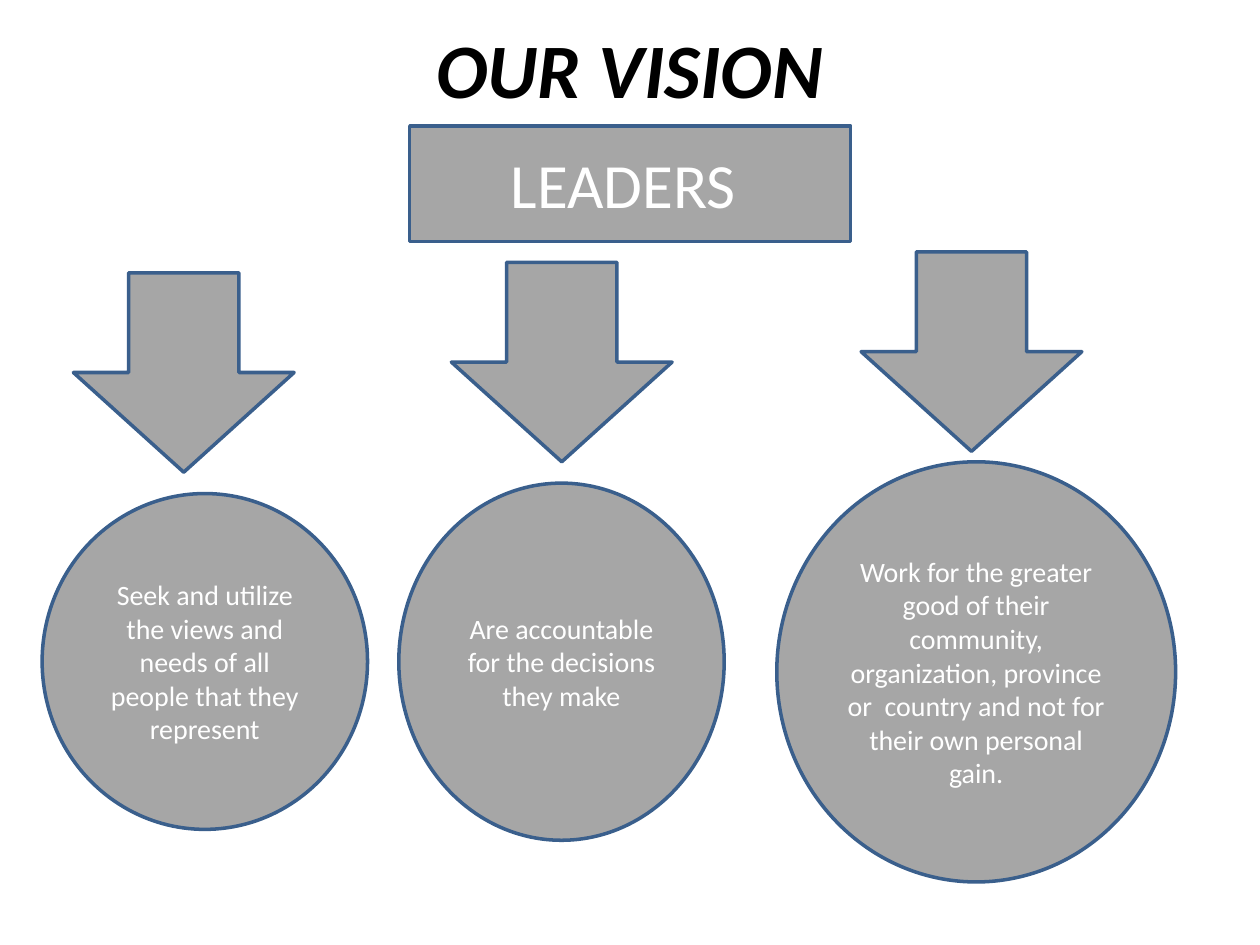
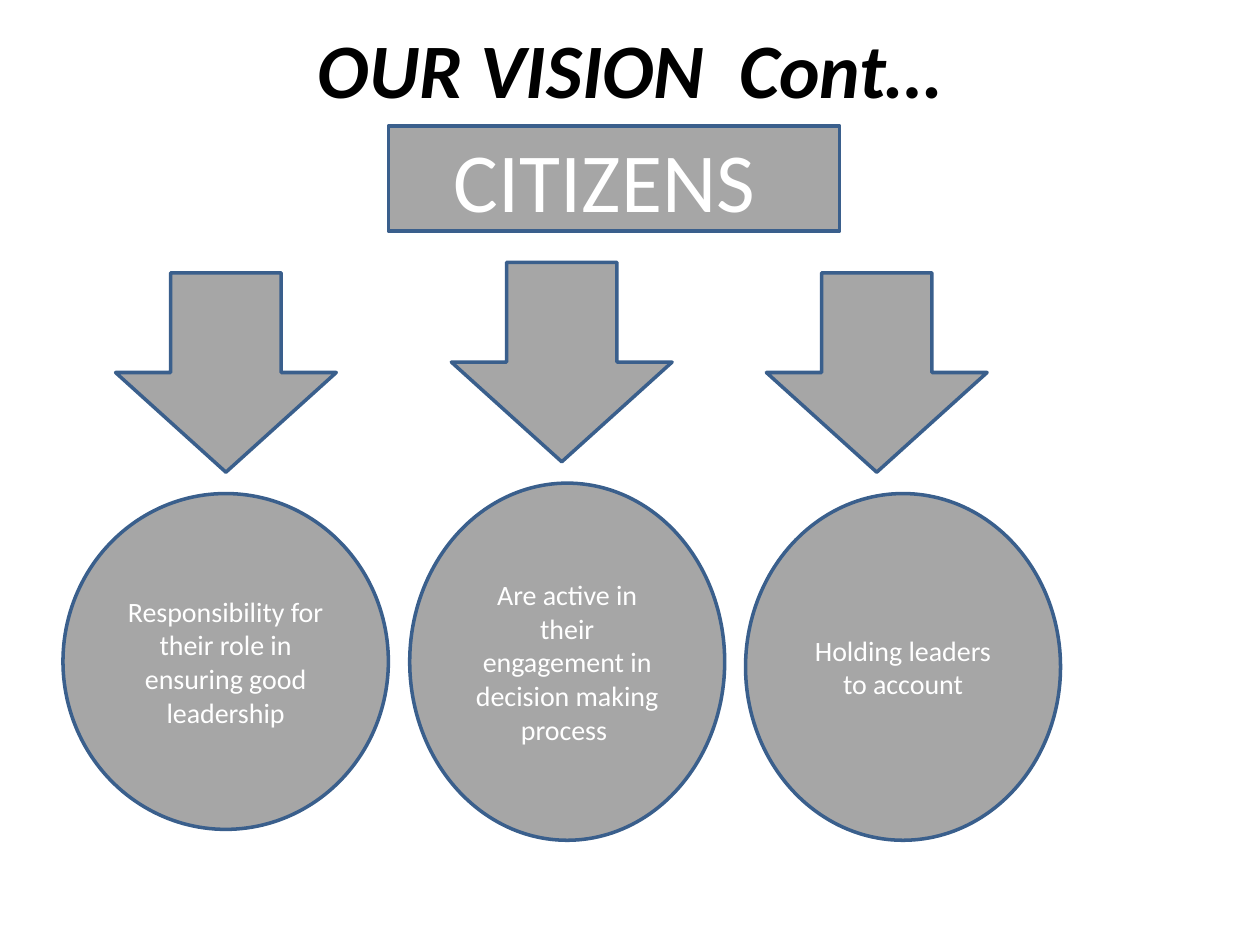
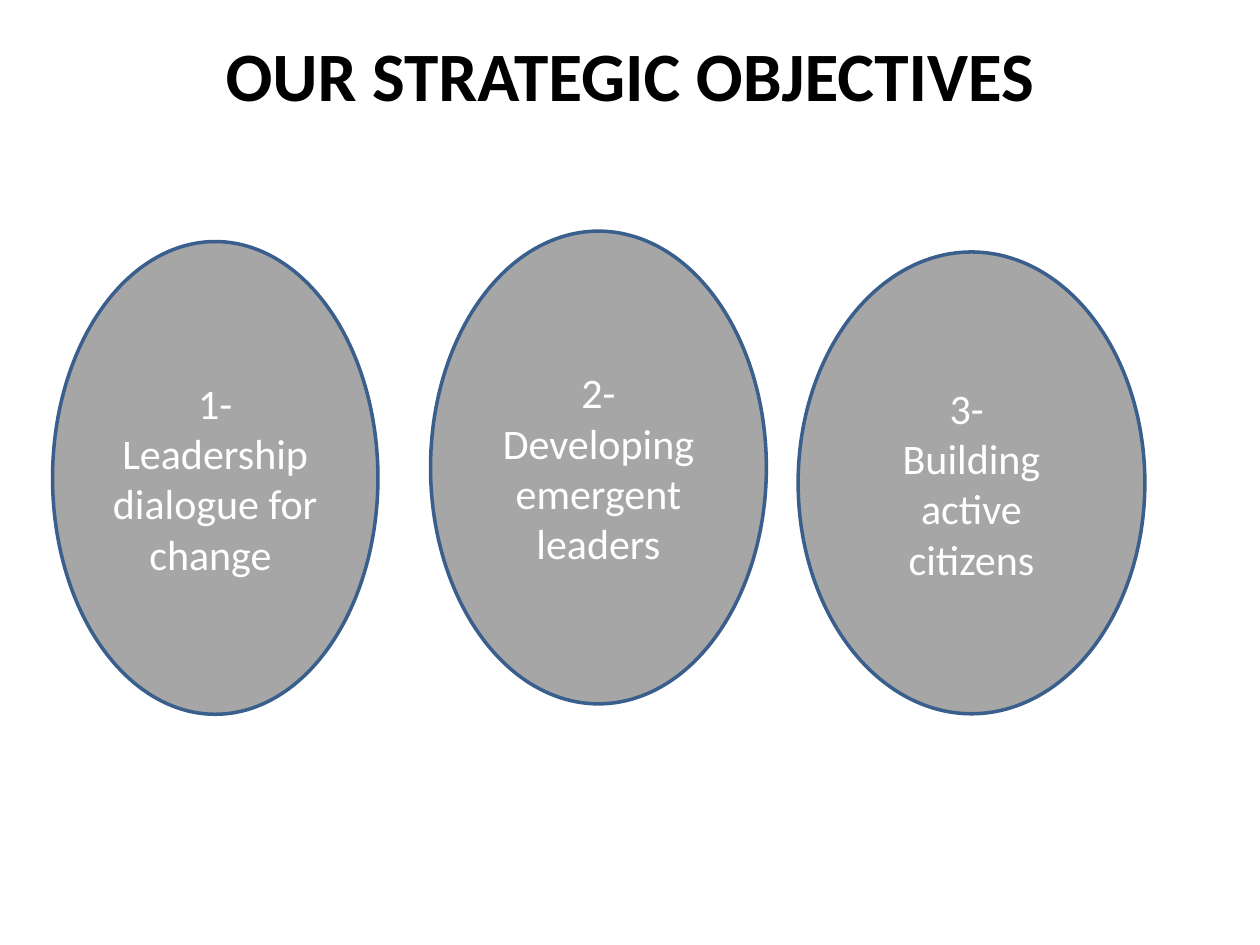
import pptx
import pptx.dml.color
import pptx.enum.shapes
import pptx.enum.text
import pptx.util
from dataclasses import dataclass

Cm = pptx.util.Cm
SHAPE = pptx.enum.shapes.MSO_SHAPE
TITLE_ONLY = 5


@dataclass(frozen=True)
class Theme:
    font: str = "Calibri"
    title_color: str = "000000"
    fill: str = "A6A6A6"
    line: str = "3A5F8C"
    text: str = "FFFFFF"
    line_width: float = 2
    title_size: float = 44
    objective_title_size: float = 39.6
    objective_size: float = 24
    circle_size: float = 16


THEME = Theme()

# Boxes are (left, top, width, height) in centimetres.
TITLE_BOX = (1.27, 0, 22.86, 2.74)
OBJECTIVE_TITLE_BOX = (1.27, 0, 22.86, 2.96)
ARROW_SIZE = (4.45, 4.02)

# Each branch: arrow (left, top), circle box, circle text.
VISIONS = [
    dict(
        title="OUR VISION",
        banner=("LEADERS ", 36, (8.26, 2.54, 8.89, 2.33)),
        branches=[
            ((1.48, 5.5), (0.85, 9.95, 6.56, 6.77),
             "Seek and utilize the views and needs of all people that they represent"),
            ((9.1, 5.29), (8.04, 9.74, 6.56, 7.2),
             "Are accountable for the decisions they make"),
            ((17.36, 5.08), (15.66, 9.31, 8.04, 8.47),
             "Work for the greater good of their community, organization, province "
             "or  country and not for their own personal gain."),
        ],
    ),
    dict(
        title="OUR VISION  Cont…",
        banner=("CITIZENS ", 48, (7.83, 2.54, 9.1, 2.12)),
        branches=[
            ((2.33, 5.5), (1.27, 9.95, 6.56, 6.77),
             "Responsibility for their role in ensuring good leadership"),
            ((9.1, 5.29), (8.26, 9.74, 6.35, 7.2),
             "Are active in their engagement in decision making process "),
            ((15.45, 5.5), (15.03, 9.95, 6.35, 6.99),
             "Holding leaders to account"),
        ],
    ),
]

OBJECTIVES_TITLE = "OUR STRATEGIC OBJECTIVES"
OBJECTIVES = [
    ((1.06, 4.87, 6.56, 9.53), "1- Leadership dialogue for change "),
    ((8.68, 4.66, 6.77, 9.53), "2- Developing emergent leaders"),
    ((16.09, 5.08, 6.99, 9.31), "3- \nBuilding active citizens"),
]


def rgb(value):
    return pptx.dml.color.RGBColor.from_string(value)


def write(shape, text, size, color=THEME.text, bold=False, italic=False):
    """Fill a shape with centred text, one paragraph per line."""
    tf = shape.text_frame
    tf.text = text
    tf.word_wrap = True
    tf.auto_size = pptx.enum.text.MSO_AUTO_SIZE.NONE
    tf.vertical_anchor = pptx.enum.text.MSO_ANCHOR.MIDDLE
    for p in tf.paragraphs:
        p.alignment = pptx.enum.text.PP_ALIGN.CENTER
        for r in p.runs:
            r.font.name = THEME.font
            r.font.size = pptx.util.Pt(size)
            r.font.color.rgb = rgb(color)
            r.font.bold = bold
            r.font.italic = italic


def add_slide(prs, title, box=TITLE_BOX, size=THEME.title_size, italic=True):
    s = prs.slides.add_slide(prs.slide_layouts[TITLE_ONLY])
    sp = s.shapes.title
    sp.left, sp.top, sp.width, sp.height = map(Cm, box)
    write(sp, title, size, color=THEME.title_color, bold=True, italic=italic)
    return s


def add_shape(s, kind, box, text="", size=THEME.circle_size):
    sp = s.shapes.add_shape(kind, *map(Cm, box))
    sp.shadow.inherit = False
    sp.fill.solid()
    sp.fill.fore_color.rgb = rgb(THEME.fill)
    sp.line.color.rgb = rgb(THEME.line)
    sp.line.width = pptx.util.Pt(THEME.line_width)
    if text:
        write(sp, text, size)


def add_vision(prs, title, banner, branches):
    s = add_slide(prs, title)
    text, size, box = banner
    add_shape(s, SHAPE.RECTANGLE, box, text, size)
    for arrow, circle, text in branches:
        add_shape(s, SHAPE.DOWN_ARROW, arrow + ARROW_SIZE)
        add_shape(s, SHAPE.OVAL, circle, text)


def add_objectives(prs):
    s = add_slide(prs, OBJECTIVES_TITLE, OBJECTIVE_TITLE_BOX,
                  THEME.objective_title_size, italic=False)
    for box, text in OBJECTIVES:
        add_shape(s, SHAPE.OVAL, box, text, THEME.objective_size)


def main():
    prs = pptx.Presentation()
    prs.slide_width, prs.slide_height = Cm(25.4), Cm(19.05)
    for vision in VISIONS:
        add_vision(prs, **vision)
    add_objectives(prs)
    prs.save("out.pptx")


if __name__ == "__main__":
    main()
